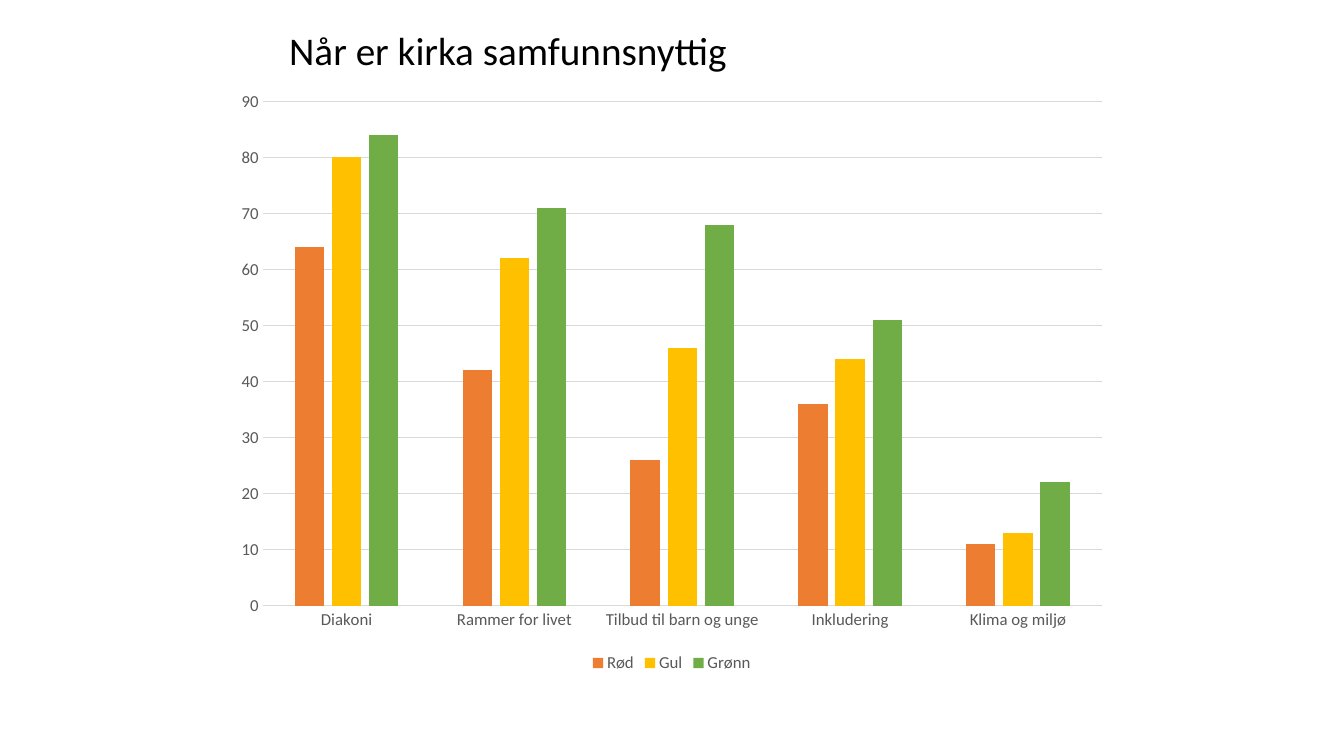
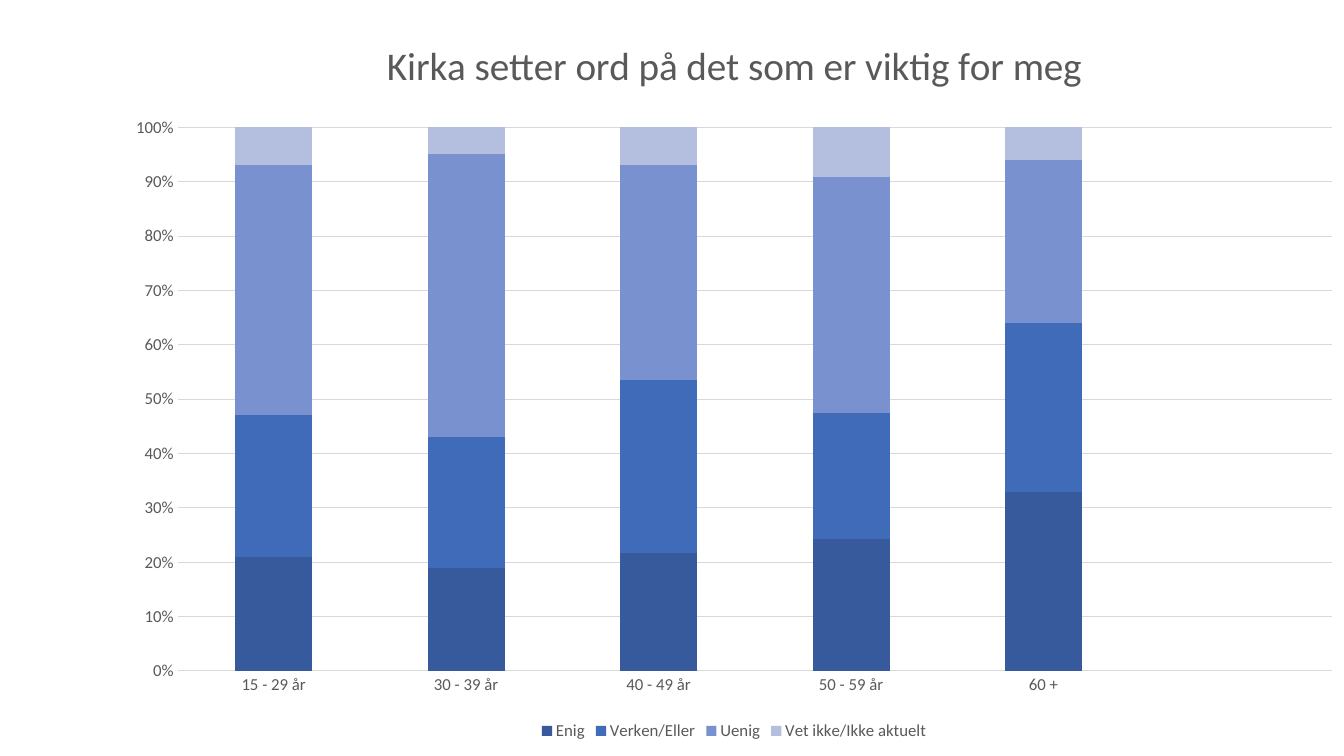
from dataclasses import dataclass
from typing import Optional

from pptx import Presentation
from pptx.chart.chart import Chart
from pptx.chart.data import CategoryChartData
from pptx.dml.color import RGBColor
from pptx.enum.chart import XL_CHART_TYPE as ChartType
from pptx.enum.chart import XL_LEGEND_POSITION as LegendPosition
from pptx.enum.chart import XL_TICK_MARK as TickMark
from pptx.slide import Slide
from pptx.text.text import Font, TextFrame
from pptx.util import Cm, Pt

# Shared style
FONT = "Calibri"
TITLE_SIZE = 28
LABEL_SIZE = 12
BLACK = RGBColor(0x00, 0x00, 0x00)
GREY_TEXT = RGBColor(0x59, 0x59, 0x59)
GRID_GREY = RGBColor(0xD9, 0xD9, 0xD9)
ORANGE = RGBColor(0xED, 0x7D, 0x31)
YELLOW = RGBColor(0xFF, 0xC0, 0x00)
GREEN = RGBColor(0x70, 0xAD, 0x47)
NAVY = RGBColor(0x36, 0x5A, 0x9B)
BLUE = RGBColor(0x40, 0x6B, 0xB8)
LIGHT_BLUE = RGBColor(0x79, 0x91, 0xCE)
PALE_BLUE = RGBColor(0xB4, 0xBE, 0xDF)


@dataclass(frozen=True)
class Answer:
    name: str
    color: RGBColor
    values: tuple[Optional[int], ...]


@dataclass(frozen=True)
class Survey:
    kind: ChartType
    box: tuple[Cm, Cm, Cm, Cm]
    groups: tuple[str, ...]
    answers: tuple[Answer, ...]
    gap: int
    overlap: int
    title: str = ""
    base_line: bool = False


USEFULNESS = Survey(
    kind=ChartType.COLUMN_CLUSTERED,
    box=(Cm(5.64), Cm(2), Cm(22.58), Cm(15.06)),
    groups=("Diakoni", "Rammer for livet", "Tilbud til barn og unge",
            "Inkludering", "Klima og miljø"),
    answers=(
        Answer("Rød", ORANGE, (64, 42, 26, 36, 11)),
        Answer("Gul", YELLOW, (80, 62, 46, 44, 13)),
        Answer("Grønn", GREEN, (84, 71, 68, 51, 22)),
    ),
    gap=219,
    overlap=-27,
    base_line=True,
)

# The last age group is an empty column at the right
RELEVANCE = Survey(
    kind=ChartType.COLUMN_STACKED_100,
    box=(Cm(2.8), Cm(0.3), Cm(31.4), Cm(18.47)),
    groups=("15 - 29 år", "30 - 39 år", "40 - 49 år", "50 - 59 år", "60 +", ""),
    answers=(
        Answer("Enig", NAVY, (21, 19, 22, 24, 33, None)),
        Answer("Verken/Eller", BLUE, (26, 24, 32, 23, 31, None)),
        Answer("Uenig", LIGHT_BLUE, (46, 52, 40, 43, 30, None)),
        Answer("Vet ikke/Ikke aktuelt", PALE_BLUE, (7, 5, 7, 9, 6, None)),
    ),
    gap=150,
    overlap=100,
    title="Kirka setter ord på det som er viktig for meg",
)


def style_font(font: Font, size: float = LABEL_SIZE, color: RGBColor = GREY_TEXT) -> None:
    font.name = FONT
    font.size = Pt(size)
    font.bold = False
    font.color.rgb = color


def write_text(frame: TextFrame, text: str, *, size: float = TITLE_SIZE,
               color: RGBColor = BLACK) -> None:
    frame.text = text
    style_font(frame.paragraphs[0].runs[0].font, size, color)


def style_axes(chart: Chart, base_line: bool) -> None:
    groups, scale = chart.category_axis, chart.value_axis
    for axis in (groups, scale):
        axis.major_tick_mark = axis.minor_tick_mark = TickMark.NONE
        axis.format.line.fill.background()
        style_font(axis.tick_labels.font)
    lines = [scale.major_gridlines.format.line]
    if base_line:
        lines.append(groups.format.line)
    for line in lines:
        line.color.rgb = GRID_GREY
        line.width = Pt(0.75)


def add_survey(slide: Slide, survey: Survey) -> None:
    data = CategoryChartData()
    data.categories = survey.groups
    for answer in survey.answers:
        data.add_series(answer.name, answer.values)
    chart = slide.shapes.add_chart(survey.kind, *survey.box, data).chart
    style_font(chart.font, 10, BLACK)

    # Title and legend
    chart.has_title = bool(survey.title)
    if survey.title:
        write_text(chart.chart_title.text_frame, survey.title, color=GREY_TEXT)
        chart.chart_title.include_in_layout = False
    chart.has_legend = True
    chart.legend.position = LegendPosition.BOTTOM
    chart.legend.include_in_layout = False
    style_font(chart.legend.font)

    # Columns
    style_axes(chart, survey.base_line)
    if survey.kind == ChartType.COLUMN_STACKED_100:
        chart.value_axis.tick_labels.number_format = "0%"
        chart.value_axis.tick_labels.number_format_is_linked = False
    plot = chart.plots[0]
    plot.vary_by_categories = False
    plot.gap_width = survey.gap
    plot.overlap = survey.overlap
    for series, answer in zip(plot.series, survey.answers):
        series.format.fill.solid()
        series.format.fill.fore_color.rgb = answer.color


def main() -> None:
    deck = Presentation()
    deck.slide_width, deck.slide_height = Cm(33.87), Cm(19.05)
    blank = deck.slide_layouts[6]

    # When the church is useful to society
    usefulness = deck.slides.add_slide(blank)
    add_survey(usefulness, USEFULNESS)
    heading = usefulness.shapes.add_textbox(Cm(7.04), Cm(0.53), Cm(21.18), Cm(1.45))
    heading.text_frame.word_wrap = True
    write_text(heading.text_frame, "Når er kirka samfunnsnyttig")

    # Whether the church speaks to each age group
    add_survey(deck.slides.add_slide(blank), RELEVANCE)

    deck.save("out.pptx")


if __name__ == "__main__":
    main()
